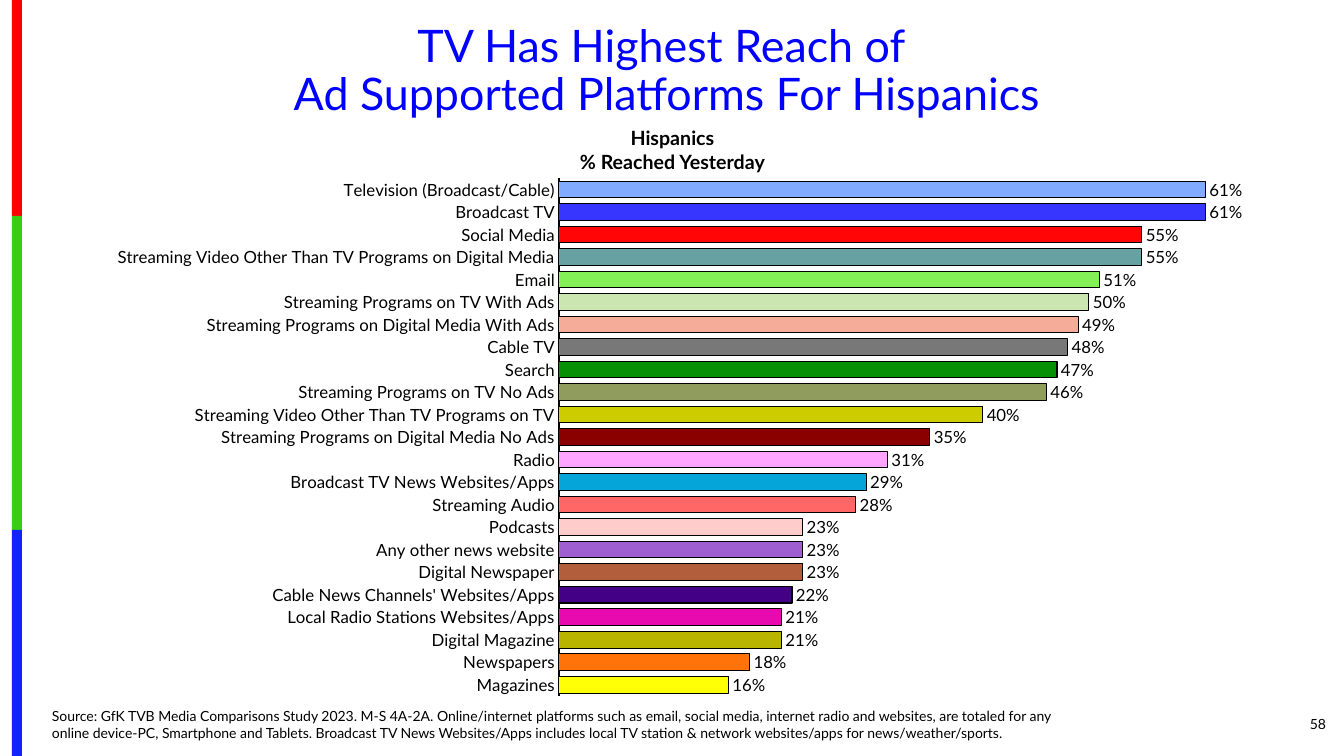
"""Build the slide on the reach of ad supported platforms among Hispanics."""
import pptx
import pptx.chart.data
import pptx.dml.color
import pptx.enum.chart
import pptx.enum.shapes
import pptx.enum.text
import pptx.oxml
import pptx.oxml.ns
import pptx.util

COLORS = {
    "red": "FE0000",
    "green": "36CF12",
    "blue": "1322FE",
    "title": "0000FF",
    "text": "000000",
    "series": "CCCCCC",
}

PLATFORMS = [
    ("Television (Broadcast/Cable)", 0.61, "80ABFF"),
    ("Broadcast TV", 0.61, "3636FF"),
    ("Social Media", 0.55, "FF0505"),
    ("Streaming Video Other Than TV Programs on Digital Media", 0.55, "67A1A1"),
    ("Email", 0.51, "84F058"),
    ("Streaming Programs on TV With Ads", 0.5, "CCE6B2"),
    ("Streaming Programs on Digital Media With Ads", 0.49, "F5AD99"),
    ("Cable TV", 0.48, "787878"),
    ("Search", 0.47, "059005"),
    ("Streaming Programs on TV No Ads", 0.46, "909C5E"),
    ("Streaming Video Other Than TV Programs on TV", 0.4, "CCCC00"),
    ("Streaming Programs on Digital Media No Ads", 0.35, "8A0000"),
    ("Radio", 0.31, "FFA4FF"),
    ("Broadcast TV News Websites/Apps", 0.29, "05A4D9"),
    ("Streaming Audio", 0.28, "FF6666"),
    ("Podcasts", 0.23, "FFCCCC"),
    ("Any other news website", 0.23, "9F5FD0"),
    ("Digital Newspaper", 0.23, "B25E3C"),
    ("Cable News Channels' Websites/Apps", 0.22, "430086"),
    ("Local Radio Stations Websites/Apps", 0.21, "E80AAF"),
    ("Digital Magazine", 0.21, "B8B400"),
    ("Newspapers", 0.18, "FF730A"),
    ("Magazines", 0.16, "FFFF05"),
]

SOURCE = (
    "Source: GfK TVB Media Comparisons Study 2023. M-S 4A-2A. Online/internet platforms "
    "such as email, social media, internet radio and websites, are totaled for any online "
    "device-PC, Smartphone and Tablets. Broadcast TV News Websites/Apps includes local TV "
    "station & network websites/apps for news/weather/sports."
)

ALIGN = pptx.enum.text.PP_ALIGN
ANCHOR = pptx.enum.text.MSO_ANCHOR


class SlideBuilder:
    EMU_PER_PX = 914400 / 100.8
    FONT = "Lato"

    def __init__(self, presentation):
        self.slide = presentation.slides.add_slide(presentation.slide_layouts[6])

    @classmethod
    def lengths(cls, *pixels):
        return [pptx.util.Emu(round(value * cls.EMU_PER_PX)) for value in pixels]

    @staticmethod
    def apply(target, formats):
        for name, value in formats.items():
            setattr(target, name, value)

    @staticmethod
    def color(name):
        return pptx.dml.color.RGBColor.from_string(COLORS.get(name, name))

    def fill(self, target, color):
        target.fill.solid()
        target.fill.fore_color.rgb = self.color(color)

    def line(self, line, points):
        line.color.rgb = self.color("text")
        line.width = pptx.util.Pt(points)

    def font(self, font, size, color="text", bold=False):
        self.apply(font, {"name": self.FONT, "size": pptx.util.Pt(size), "bold": bold})
        font.color.rgb = self.color(color)

    def bar(self, box, color):
        kind = pptx.enum.shapes.MSO_SHAPE.RECTANGLE
        shape = self.slide.shapes.add_shape(kind, *self.lengths(*box))
        shape.shadow.inherit = False
        self.fill(shape, color)
        shape.line.fill.background()

    def text(self, box, text, size, color="text", bold=False, align=ALIGN.LEFT,
             anchor=ANCHOR.TOP, spacing=1.0):
        frame = self.slide.shapes.add_textbox(*self.lengths(*box)).text_frame
        self.apply(frame, {"word_wrap": True, "vertical_anchor": anchor, "text": text})
        for paragraph in frame.paragraphs:
            self.apply(paragraph, {"alignment": align, "line_spacing": spacing})
            for run in paragraph.runs:
                self.font(run.font, size, color, bold)

    def chart(self, box, rows, plot_box):
        data = pptx.chart.data.CategoryChartData(number_format="0%")
        data.categories = [name for name, _, _ in rows]
        data.add_series("Series 1", [value for _, value, _ in rows])
        kind = pptx.enum.chart.XL_CHART_TYPE.BAR_CLUSTERED
        chart = self.slide.shapes.add_chart(kind, *self.lengths(*box), data).chart
        self.apply(chart, {"has_legend": False, "has_title": False})
        self.font(chart.font, 10)

        self.apply(chart.category_axis, {
            "reverse_order": True,
            "has_major_gridlines": False,
            "major_tick_mark": pptx.enum.chart.XL_TICK_MARK.NONE,
        })
        self.font(chart.category_axis.tick_labels.font, 12)
        self.line(chart.category_axis.format.line, 1.5)
        self.apply(chart.value_axis, {
            "visible": False,
            "has_major_gridlines": False,
            "minimum_scale": 0,
            "maximum_scale": 0.7,
        })

        plot = chart.plots[0]
        self.apply(plot, {"gap_width": 34, "vary_by_categories": False,
                          "has_data_labels": True})
        self.apply(plot.data_labels, {
            "show_value": True,
            "number_format": "0%",
            "number_format_is_linked": False,
            "position": pptx.enum.chart.XL_LABEL_POSITION.OUTSIDE_END,
        })
        self.font(plot.data_labels.font, 12)
        series = plot.series[0]
        series.invert_if_negative = False
        self.fill(series.format, "series")
        self.line(series.format.line, 0.75)
        for index, (_, _, color) in enumerate(rows):
            point = series.points[index].format
            self.fill(point, color)
            self.line(point.line, 0.75)
        self.place_plot(chart, plot_box)

    @staticmethod
    def place_plot(chart, plot_box):
        area = chart.element.xpath("c:chart/c:plotArea")[0]
        for layout in area.xpath("c:layout"):
            area.remove(layout)
        settings = [("layoutTarget", "inner"), ("xMode", "edge"), ("yMode", "edge")]
        settings += zip("xywh", plot_box)
        children = "".join(f'<c:{name} val="{value}"/>' for name, value in settings)
        area.insert(0, pptx.oxml.parse_xml(
            f"<c:layout {pptx.oxml.ns.nsdecls('c')}>"
            f"<c:manualLayout>{children}</c:manualLayout></c:layout>"
        ))


def main():
    presentation = pptx.Presentation()
    width, height = SlideBuilder.lengths(1344, 756)
    SlideBuilder.apply(presentation, {"slide_width": width, "slide_height": height})
    builder = SlideBuilder(presentation)

    top = 0
    for color, bottom in (("red", 216), ("green", 530), ("blue", 756)):
        builder.bar((12, top, 10, bottom - top), color)
        top = bottom

    builder.chart((25, 151, 1302, 546), PLATFORMS, (0.41, 0.05, 0.57, 0.95))
    builder.text((41, 18, 1252, 108),
                 "TV Has Highest Reach of \vAd Supported Platforms For Hispanics",
                 32, "title", align=ALIGN.CENTER, anchor=ANCHOR.MIDDLE, spacing=0.9)
    builder.text((496, 121, 353, 57), "Hispanics\n% Reached Yesterday", 14,
                 bold=True, align=ALIGN.CENTER)
    builder.text((42, 702, 1033, 44), SOURCE, 10, anchor=ANCHOR.BOTTOM)
    builder.text((1227, 704, 109, 40), "58", 10, align=ALIGN.RIGHT, anchor=ANCHOR.MIDDLE)
    presentation.save("out.pptx")


if __name__ == "__main__":
    main()
